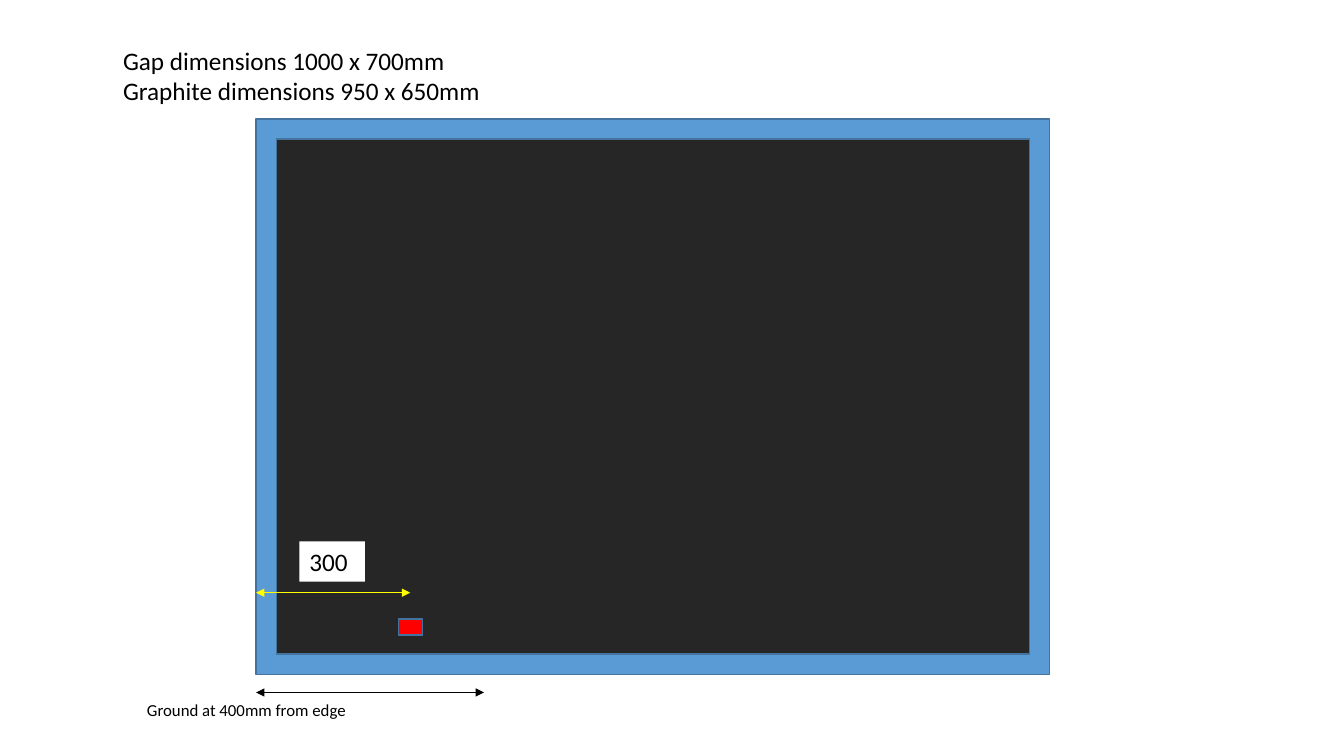
from lxml.etree import SubElement
from pptx import Presentation
from pptx.dml.color import RGBColor
from pptx.enum.shapes import MSO_CONNECTOR, MSO_SHAPE
from pptx.enum.text import MSO_ANCHOR, MSO_AUTO_SIZE, PP_ALIGN
from pptx.oxml.ns import qn
from pptx.util import Pt

PX = 9144
FONT = "Calibri"
BLACK = "000000"
OUTLINE = "43739E"


def px(*lengths):
    return [length * PX for length in lengths]


def colour(hex_code):
    return RGBColor.from_string(hex_code)


def write(holder, lines, size):
    frame = holder.text_frame
    frame.text = "\n".join(lines)
    frame.word_wrap = True
    frame.auto_size = MSO_AUTO_SIZE.NONE
    frame.vertical_anchor = MSO_ANCHOR.TOP
    for paragraph in frame.paragraphs:
        paragraph.alignment = PP_ALIGN.LEFT
        paragraph.line_spacing = 1.0
        paragraph.font.name = FONT
        paragraph.font.size = Pt(size)
        paragraph.font.color.rgb = colour(BLACK)


def add_panel(slide, box, fill, outline=OUTLINE):
    panel = slide.shapes.add_shape(MSO_SHAPE.RECTANGLE, *px(*box))
    panel.shadow.inherit = False
    panel.fill.solid()
    panel.fill.fore_color.rgb = colour(fill)
    if outline:
        panel.line.color.rgb = colour(outline)
        panel.line.width = Pt(1)
    else:
        panel.line.fill.background()
    return panel


def add_dimension(slide, left, y, length, stroke):
    arrow = slide.shapes.add_connector(
        MSO_CONNECTOR.STRAIGHT, *px(left, y, left + length, y))
    arrow.line.color.rgb = colour(stroke)
    arrow.line.width = Pt(0.5)
    outline = arrow.line._get_or_add_ln()
    for end in ("a:headEnd", "a:tailEnd"):
        SubElement(outline, qn(end), type="triangle")
    SubElement(arrow._element.spPr, qn("a:effectLst"))


def add_heading(slide, box):
    heading = slide.shapes.title
    heading.left, heading.top, heading.width, heading.height = px(*box)
    write(heading, ["Gap dimensions 1000 x 700mm",
                    "Graphite dimensions 950 x 650mm"], 18)


def add_plate(slide, box):
    left, top, width, height = box
    margin = 20
    add_panel(slide, box, "5B9BD5")
    add_panel(slide, (left + margin, top + margin,
                      width - 2 * margin, height - 2 * margin), "262626")
    add_panel(slide, (left + 141, top + 496, 24, 16), "FF0000")
    add_dimension(slide, left, top + 470, 153, "FFFF00")
    distance = add_panel(slide, (left + 43, top + 419, 65, 40), "FFFFFF", None)
    write(distance, ["300"], 18)


def add_ground(slide, box):
    left, top, width, height = box
    add_dimension(slide, left + 118, top - 2, 226, BLACK)
    caption = slide.shapes.add_textbox(*px(left, top, width, height))
    write(caption, ["Ground at 400mm from edge"], 12)


def main():
    deck = Presentation()
    deck.slide_width, deck.slide_height = px(1333, 750)
    slide = deck.slides.add_slide(deck.slide_layouts.get_by_name("Title Only"))
    add_heading(slide, (112, 40, 488, 71))
    add_plate(slide, (254, 118, 787, 551))
    add_ground(slide, (136, 689, 226, 30))
    deck.save("out.pptx")


if __name__ == "__main__":
    main()
